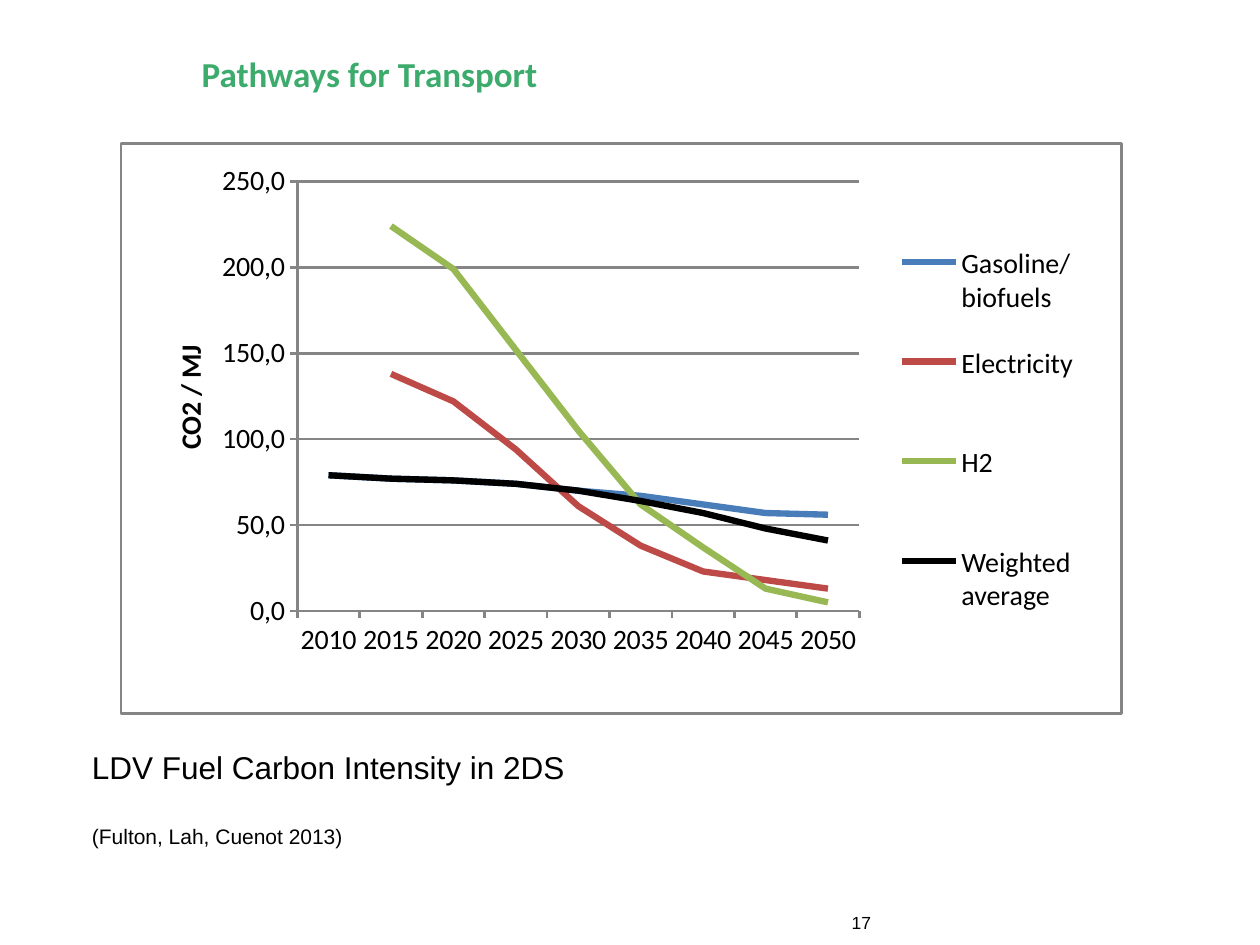
from lxml.etree import SubElement
from pptx import Presentation
from pptx.chart.data import CategoryChartData
from pptx.dml.color import RGBColor
from pptx.enum.chart import XL_CHART_TYPE, XL_TICK_MARK
from pptx.enum.shapes import MSO_CONNECTOR, MSO_SHAPE
from pptx.oxml import parse_xml
from pptx.oxml.ns import nsdecls, qn
from pptx.util import Inches, Pt

THEME = {
    "ink": RGBColor.from_string("000000"),
    "heading": RGBColor.from_string("3CAB6C"),
    "grid": RGBColor.from_string("858585"),
    "gasoline": RGBColor.from_string("497DBA"),
    "electricity": RGBColor.from_string("BD4A47"),
    "hydrogen": RGBColor.from_string("97B853"),
    "grid_width": Pt(1.56),
    "series_width": Pt(3.64),
    "heading_size": Pt(20),
    "caption_size": Pt(18),
    "chart_size": Pt(16),
    "citation_size": Pt(12),
    "number_size": Pt(10),
}
CHART_FONT = {"name": "Calibri", "size": THEME["chart_size"], "bold": False}


def set_font(font, values, color):
    for attribute, value in values.items():
        setattr(font, attribute, value)
    font.color.rgb = color


def add_text(slide, text, left, top, width, height, values, color=THEME["ink"]):
    box = slide.shapes.add_textbox(Inches(left), Inches(top), Inches(width), Inches(height))
    frame = box.text_frame
    insets = {"margin_left": 0, "margin_right": 0, "margin_top": Inches(0.02), "margin_bottom": 0}
    for attribute, value in insets.items():
        setattr(frame, attribute, value)
    frame.word_wrap = True
    frame.text = text
    set_font(frame.paragraphs[0].runs[0].font, values, color)


presentation = Presentation()
presentation.slide_width = Inches(10)
presentation.slide_height = Inches(7.5)
slide = presentation.slides.add_slide(presentation.slide_layouts[6])

add_text(slide, "Pathways for Transport", 1.6, 0.4, 6.11, 0.39,
         {"name": "Calibri", "size": THEME["heading_size"], "bold": True}, THEME["heading"])
add_text(slide, "LDV Fuel Carbon Intensity in 2DS", 0.73, 5.92, 4, 0.33,
         {"name": "Arial", "size": THEME["caption_size"]})
add_text(slide, "(Fulton, Lah, Cuenot 2013)", 0.73, 6.52, 2.2, 0.23,
         {"name": "Arial", "size": THEME["citation_size"]})
add_text(slide, "17", 6.76, 7.22, 0.41, 0.36,
         {"name": "Arial", "size": THEME["number_size"]})

left, top, width, height = 0.96, 1.14, 7.94, 4.52
area = [Inches(value) for value in (left, top, width, height)]
border = slide.shapes.add_shape(MSO_SHAPE.RECTANGLE, *area)
border.shadow.inherit = False
border.fill.background()
border.line.color.rgb = THEME["grid"]
border.line.width = THEME["grid_width"]

intensities = [
    ("Gasoline/ biofuels", THEME["gasoline"], [79, 77, 76, 74, 70, 67, 62, 57, 56]),
    ("Electricity", THEME["electricity"], [None, 138, 122, 94, 61, 38, 23, 18, 13]),
    ("H2", THEME["hydrogen"], [None, 224, 199, 152, 105, 62, 37, 13, 5]),
    ("Weighted average", THEME["ink"], [79, 77, 76, 74, 70, 64, 57, 48, 41]),
]
data = CategoryChartData()
data.categories = [str(year) for year in range(2010, 2051, 5)]
for fuel, color, values in intensities:
    data.add_series(fuel, values)
chart = slide.shapes.add_chart(XL_CHART_TYPE.LINE, *area, data).chart
chart.has_title = False
chart.has_legend = False
set_font(chart.font, CHART_FONT, THEME["ink"])
chart.plots[0].vary_by_categories = False
for series, (fuel, color, values) in zip(chart.plots[0].series, intensities):
    series.smooth = False
    series.format.line.color.rgb = color
    series.format.line.width = THEME["series_width"]

years, carbon = chart.category_axis, chart.value_axis
for attribute, value in {"minimum_scale": 0, "maximum_scale": 250, "major_unit": 50,
                         "has_major_gridlines": True}.items():
    setattr(carbon, attribute, value)
for axis in (years, carbon):
    axis.major_tick_mark = XL_TICK_MARK.OUTSIDE
    set_font(axis.tick_labels.font, CHART_FONT, THEME["ink"])
for line in (years.format.line, carbon.format.line, carbon.major_gridlines.format.line):
    line.color.rgb = THEME["grid"]
    line.width = THEME["grid_width"]
carbon.tick_labels.number_format = '0",0"'
carbon.tick_labels.number_format_is_linked = False
years._element.find(qn("c:txPr")).find(qn("a:bodyPr")).set("rot", "0")

carbon_title = carbon.axis_title
carbon_title.text_frame.text = "CO2 / MJ"
set_font(carbon_title.text_frame.paragraphs[0].runs[0].font,
         {**CHART_FONT, "bold": True}, THEME["ink"])
title_body = carbon_title._element.find(".//" + qn("a:bodyPr"))
title_body.set("rot", "-5400000")
title_body.set("vert", "horz")

layouts = [
    (chart._chartSpace.chart.plotArea, 0,
     {"layoutTarget": "inner", "xMode": "edge", "yMode": "edge",
      "x": (2.36 - left) / width, "y": (1.44 - top) / height,
      "w": 4.46 / width, "h": 3.41 / height}),
    (carbon_title._element, 1,
     {"xMode": "edge", "yMode": "edge",
      "x": (1.32 - left) / width, "y": (2.7 - top) / height}),
]
for parent, position, settings in layouts:
    for old_layout in parent.findall(qn("c:layout")):
        parent.remove(old_layout)
    layout = parse_xml(f"<c:layout {nsdecls('c')}><c:manualLayout/></c:layout>")
    for tag, value in settings.items():
        SubElement(layout[0], qn(f"c:{tag}")).set("val", str(value))
    parent.insert(position, layout)

for row, (fuel, color, values) in enumerate(intensities):
    key_top = 2.08 + row * 0.79
    key = slide.shapes.add_connector(MSO_CONNECTOR.STRAIGHT, Inches(7.16), Inches(key_top),
                                     Inches(7.59), Inches(key_top))
    key.line.color.rgb = color
    key.line.width = THEME["series_width"]
    SubElement(key._element.spPr, qn("a:effectLst"))
    add_text(slide, fuel, 7.63, key_top - 0.15, 0.95, 0.57, CHART_FONT)

presentation.save("out.pptx")
